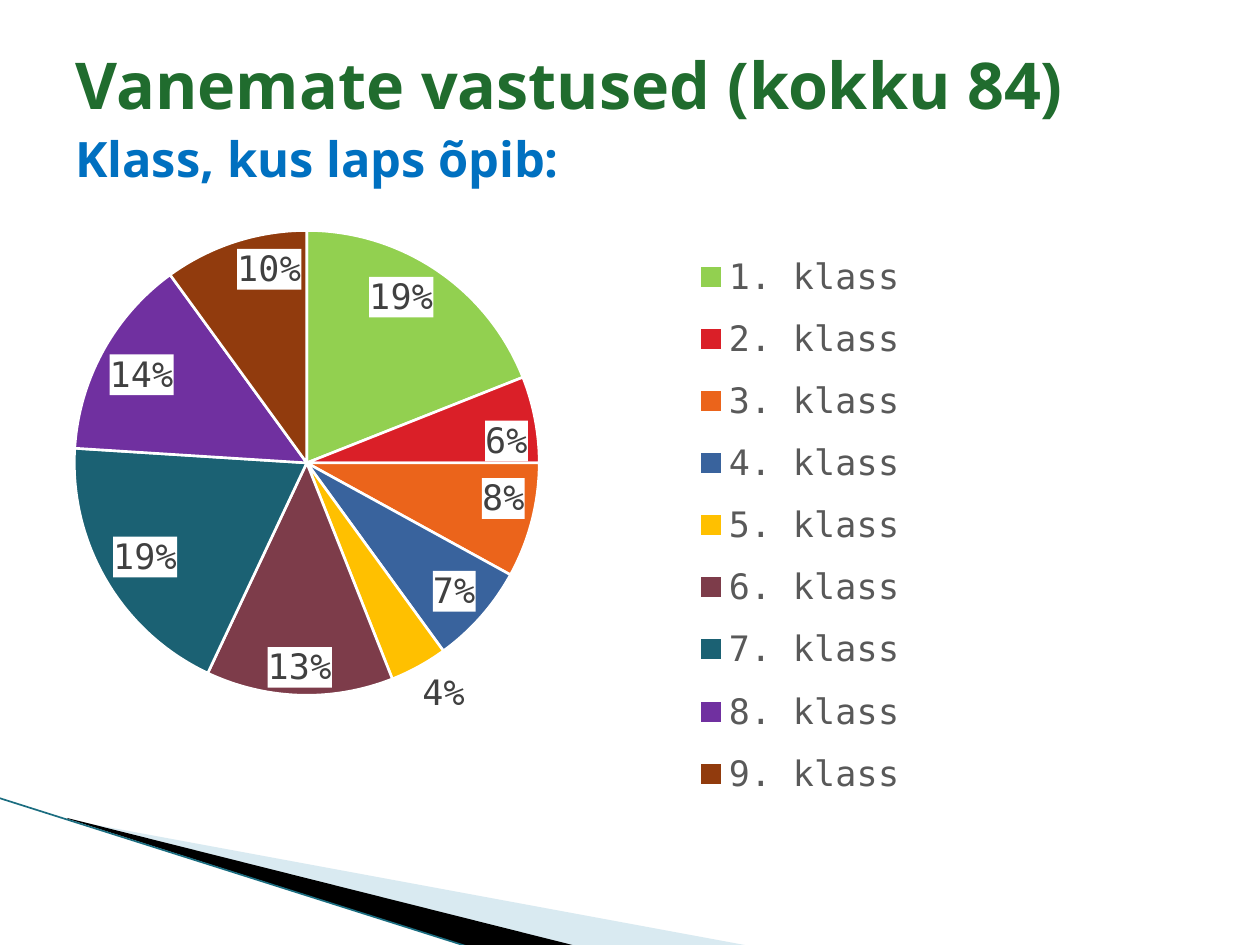
"""Build a slide with a pie chart of the parents' answers by class."""
from dataclasses import dataclass

from lxml import etree
from pptx import Presentation
from pptx.chart.data import CategoryChartData
from pptx.dml.color import RGBColor
from pptx.enum.chart import XL_CHART_TYPE, XL_LABEL_POSITION, XL_LEGEND_POSITION
from pptx.enum.shapes import MSO_CONNECTOR
from pptx.enum.text import MSO_ANCHOR
from pptx.oxml import parse_xml
from pptx.oxml.ns import nsdecls, qn
from pptx.util import Pt

PIE = XL_CHART_TYPE.PIE
INSIDE_END = XL_LABEL_POSITION.INSIDE_END
OUTSIDE_END = XL_LABEL_POSITION.OUTSIDE_END
LEGEND_BOTTOM = XL_LEGEND_POSITION.BOTTOM
STRAIGHT = MSO_CONNECTOR.STRAIGHT
MIDDLE = MSO_ANCHOR.MIDDLE
EMU_PER_PX = 914400 / 126


@dataclass(frozen=True)
class Theme:
    title_font: str = "Open Sans"
    chart_font: str = "DejaVu Sans Mono"
    title_size: float = 36.9
    subtitle_size: float = 27.9
    chart_size: float = 20
    title: str = "206C2E"
    subtitle: str = "0070C0"
    label: str = "404040"
    legend: str = "595959"
    white: str = "FFFFFF"
    black: str = "000000"
    pale: str = "A0CBDC"
    edge: str = "1B6D80"


@dataclass(frozen=True)
class Heading:
    text: str
    size: float
    color: str
    space_before: float = 0


@dataclass(frozen=True)
class Wedge:
    points: tuple
    color: str
    opacity: int = 100


@dataclass(frozen=True)
class Slice:
    name: str
    share: float
    color: str


THEME = Theme()
HEADINGS = (
    Heading("Vanemate vastused (kokku 84)", THEME.title_size, THEME.title),
    Heading("Klass, kus laps õpib:", THEME.subtitle_size, THEME.subtitle, 4),
)
WEDGES = (
    Wedge(((69, 820), (750, 946), (575, 946), (69, 819)), THEME.pale, 40),
    Wedge(((67, 818), (576, 946), (469, 947), (68, 819)), THEME.black),
)
SLICES = (
    Slice("1. klass", 0.19, "92D050"),
    Slice("2. klass", 0.06, "DA1F28"),
    Slice("3. klass", 0.08, "EB641B"),
    Slice("4. klass", 0.07, "39639D"),
    Slice("5. klass", 0.04, "FFC000"),
    Slice("6. klass", 0.13, "7D3C4A"),
    Slice("7. klass", 0.19, "1B6173"),
    Slice("8. klass", 0.14, "7030A0"),
    Slice("9. klass", 0.10, "913B0D"),
)
NARROW_SHARE = 0.05


def px(value: int) -> int:
    """Turn pixels into EMU."""
    return round(value * EMU_PER_PX)


def style_font(font, name: str, size: float, color: str, bold: bool = False) -> None:
    """Set the face, size, colour and weight of a font."""
    font.name, font.size, font.bold = name, Pt(size), bold
    font.color.rgb = RGBColor.from_string(color)


def add_wedge(page, wedge: Wedge) -> None:
    """Draw one filled sliver of the corner decoration."""
    builder = page.shapes.build_freeform(*wedge.points[0], scale=EMU_PER_PX)
    builder.add_line_segments(wedge.points[1:], close=True)
    shape = builder.convert_to_shape()
    shape.shadow.inherit = False
    shape.line.fill.background()
    shape.fill.solid()
    shape.fill.fore_color.rgb = RGBColor.from_string(wedge.color)
    if wedge.opacity < 100:
        color = shape.fill._xPr.find(".//" + qn("a:srgbClr"))
        etree.SubElement(color, qn("a:alpha"), val=str(wedge.opacity * 1000))


def add_edge(page) -> None:
    """Draw the thin line along the corner decoration."""
    line = page.shapes.add_connector(STRAIGHT, px(-1), px(798), px(469), px(947))
    line.line.width = Pt(0.95)
    line.line.color.rgb = RGBColor.from_string(THEME.edge)
    etree.SubElement(line._element.spPr, qn("a:effectLst"))


def add_headings(page, headings: tuple[Heading, ...]) -> None:
    """Write the title and the question in one box."""
    box = page.shapes.add_textbox(px(63), px(38), px(1134), px(156))
    frame = box.text_frame
    frame.word_wrap = True
    frame.vertical_anchor = MIDDLE
    for index, heading in enumerate(headings):
        para = frame.add_paragraph() if index else frame.paragraphs[0]
        if heading.space_before:
            para.space_before = Pt(heading.space_before)
        span = para.add_run()
        span.text = heading.text
        style_font(span.font, THEME.title_font, heading.size, heading.color, True)


def manual_layout(x: float, y: float, w: float, h: float, inner: bool = False):
    """Make a chart layout from fractions of the chart area."""
    target = '<c:layoutTarget val="inner"/>' if inner else ""
    return parse_xml(
        f'<c:layout {nsdecls("c")}><c:manualLayout>{target}'
        '<c:xMode val="edge"/><c:yMode val="edge"/>'
        f'<c:x val="{x}"/><c:y val="{y}"/><c:w val="{w}"/><c:h val="{h}"/>'
        "</c:manualLayout></c:layout>"
    )


def style_labels(series) -> None:
    """Show shares on white plates, with narrow slices labelled outside."""
    labels = series.data_labels
    labels.show_value = True
    labels.number_format = "0%"
    labels.number_format_is_linked = False
    labels.position = INSIDE_END
    style_font(labels.font, THEME.chart_font, THEME.chart_size, THEME.label)
    plate = parse_xml(
        f'<c:spPr {nsdecls("c", "a")}><a:solidFill>'
        f'<a:srgbClr val="{THEME.white}"/></a:solidFill></c:spPr>'
    )
    labels._element.find(qn("c:txPr")).addprevious(plate)
    for index, part in enumerate(SLICES):
        if part.share < NARROW_SHARE:
            label = series.points[index].data_label
            style_font(label.font, THEME.chart_font, THEME.chart_size, THEME.label)
            label.position = OUTSIDE_END


def add_pie(page, slices: tuple[Slice, ...]) -> None:
    """Place the pie chart with its legend on the right."""
    data = CategoryChartData(number_format="0%")
    data.categories = [part.name for part in slices]
    data.add_series("Series 1", [part.share for part in slices])
    frame = page.shapes.add_chart(PIE, px(63), px(204), px(1134), px(624), data)
    chart = frame.chart
    chart.has_title = False
    style_font(chart.font, THEME.chart_font, 10, THEME.black)
    plot = chart.plots[0]
    plot.vary_by_categories = True
    series = plot.series[0]
    for index, part in enumerate(slices):
        style = series.points[index].format
        style.fill.solid()
        style.fill.fore_color.rgb = RGBColor.from_string(part.color)
        style.line.color.rgb = RGBColor.from_string(THEME.white)
        style.line.width = Pt(1.5)
    style_labels(series)
    chart.has_legend = True
    legend = chart.legend
    legend.position = LEGEND_BOTTOM
    legend.include_in_layout = False
    style_font(legend.font, THEME.chart_font, THEME.chart_size, THEME.legend)
    for old in legend._element.findall(qn("c:layout")):
        legend._element.remove(old)
    position = legend._element.find(qn("c:legendPos"))
    position.addnext(manual_layout(0.55, 0.05, 0.2, 0.93))
    area = chart._chartSpace.chart.plotArea
    for old in area.findall(qn("c:layout")):
        area.remove(old)
    area.insert(0, manual_layout(0.01, 0.04, 0.41, 0.75, True))


def main() -> None:
    """Build and save the deck."""
    deck = Presentation()
    deck.slide_width, deck.slide_height = px(1260), px(945)
    page = deck.slides.add_slide(deck.slide_layouts[6])
    for wedge in WEDGES:
        add_wedge(page, wedge)
    add_edge(page)
    add_pie(page, SLICES)
    add_headings(page, HEADINGS)
    deck.save("out.pptx")


if __name__ == "__main__":
    main()
